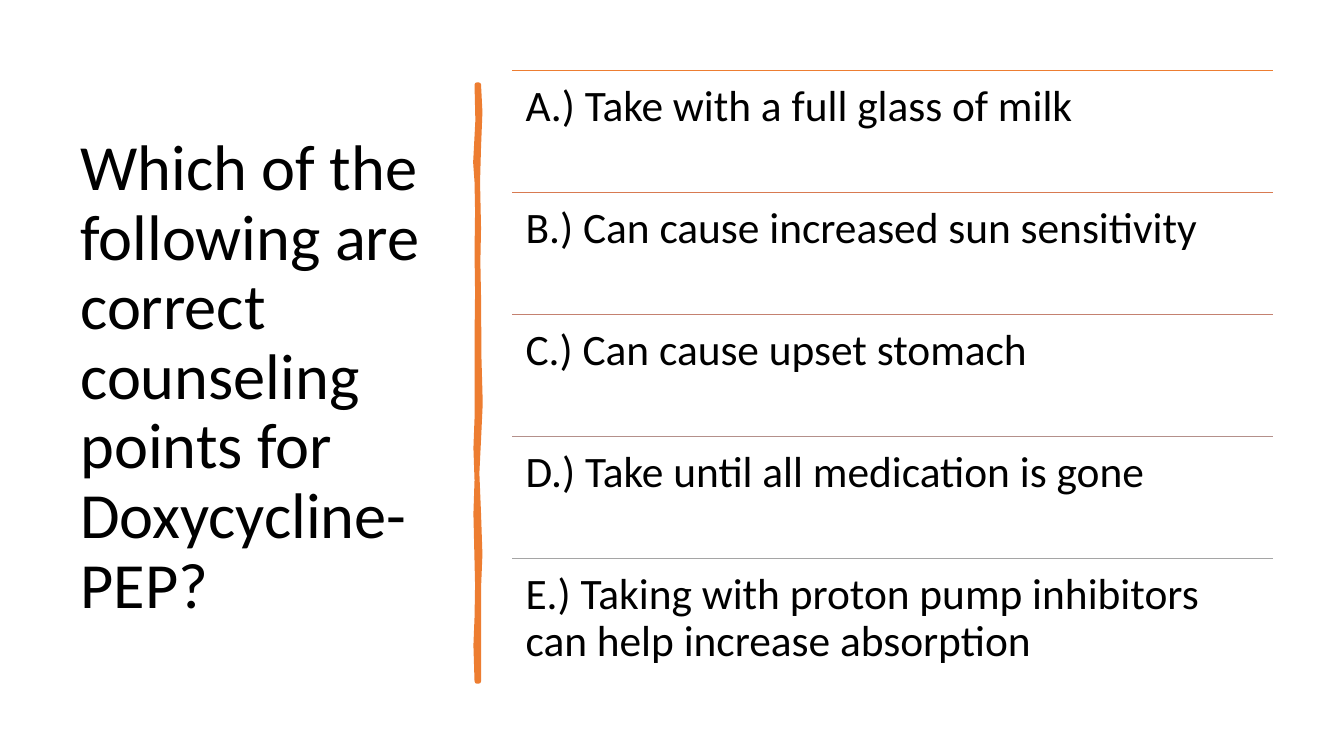
"""Build a quiz slide: a question, a brushed bar and five ruled answers."""
from lxml import etree
from pptx import Presentation
from pptx.dml.color import RGBColor
from pptx.enum.shapes import MSO_CONNECTOR
from pptx.enum.text import MSO_ANCHOR, MSO_AUTO_SIZE, PP_ALIGN
from pptx.oxml.ns import qn
from pptx.util import Pt

LINE = MSO_CONNECTOR.STRAIGHT
LEFT = PP_ALIGN.LEFT
TOP, MID = MSO_ANCHOR.TOP, MSO_ANCHOR.MIDDLE
FIT = MSO_AUTO_SIZE.NONE
FONT = "Calibri"
HUES = {"text": "000000", "bar": "ED7D31"}
ROWS = [
    ("A.) Take with a full glass of milk", "ED7D31"),
    ("B.) Can cause increased sun sensitivity", "D87A51"),
    ("C.) Can cause upset stomach", "C48170"),
    ("D.) Take until all medication is gone", "B4908B"),
    ("E.) Taking with proton pump inhibitors can help increase absorption", "A5A5A5"),
]
EDGE = [
    (342, 60.5), (343, 80), (342, 105), (341.3, 130), (342, 163),
    (341.5, 187), (342, 212), (342.3, 256), (343.2, 288), (342, 314),
    (340.8, 338), (342, 367), (343, 396), (342, 420), (342, 486.7),
    (340.6, 486.7), (339.8, 461), (340.6, 441), (341, 418), (340.6, 401),
    (339.8, 367), (340.6, 343), (339.8, 320), (340.6, 299), (340.6, 241),
    (341, 209), (340.6, 180), (341, 151), (340.6, 130), (339.6, 116),
    (341.2, 86), (340.6, 60.5),
]


def style(frame, size, anchor):
    """Format the one paragraph of a text frame."""
    frame.word_wrap = True
    frame.auto_size = FIT
    frame.vertical_anchor = anchor
    par = frame.paragraphs[0]
    par.alignment = LEFT
    par.line_spacing = 0.9
    font = par.runs[0].font
    font.name, font.size = FONT, Pt(size)
    font.color.rgb = RGBColor.from_string(HUES["text"])


deck = Presentation()
deck.slide_width, deck.slide_height = Pt(960), Pt(540)
slide = deck.slides.add_slide(deck.slide_layouts[5])
shapes = slide.shapes

title = shapes.title
title.left, title.top = Pt(50.2), Pt(50.4)
title.width, title.height = Pt(269.3), Pt(440)
title.text_frame.text = "Which of the following are correct counseling points for Doxycycline-PEP?"
style(title.text_frame, 46, MID)

spots = [(Pt(x), Pt(y)) for x, y in EDGE]
pen = shapes.build_freeform(*spots[0])
pen.add_line_segments(spots[1:], close=True)
bar = pen.convert_to_shape()
bar.shadow.inherit = False
bar.fill.solid()
bar.fill.fore_color.rgb = RGBColor.from_string(HUES["bar"])
bar.line.color.rgb = RGBColor.from_string(HUES["bar"])
bar.line.width = Pt(3.25)

x, wide, step = 366, 543.6, 87.14
for i, (words, hue) in enumerate(ROWS):
    y = 50.5 + i * step
    rule = shapes.add_connector(LINE, Pt(x), Pt(y), Pt(x + wide), Pt(y))
    rule.line.color.rgb = RGBColor.from_string(hue)
    rule.line.width = Pt(1)
    etree.SubElement(rule._element.spPr, qn("a:effectLst"))
    box = shapes.add_textbox(Pt(x), Pt(y), Pt(wide), Pt(step))
    frame = box.text_frame
    frame.margin_left = frame.margin_right = Pt(9.4)
    frame.margin_top = frame.margin_bottom = Pt(9.4)
    frame.text = words
    style(frame, 31, TOP)

deck.save("out.pptx")
